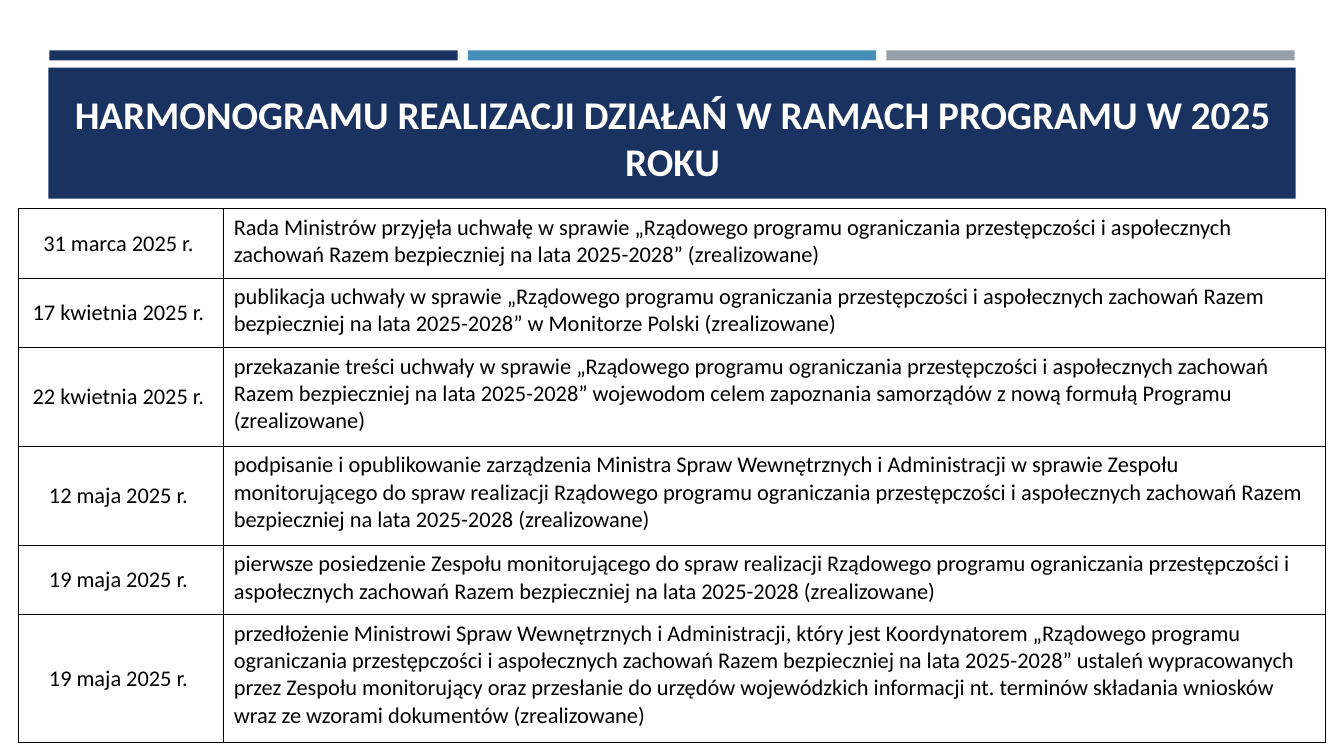
from lxml import etree
from pptx import Presentation
from pptx.dml.color import RGBColor
from pptx.enum.shapes import MSO_SHAPE
from pptx.enum.text import MSO_ANCHOR, MSO_AUTO_SIZE, PP_ALIGN
from pptx.oxml.ns import qn
from pptx.util import Inches, Pt

NAVY = RGBColor(0x1A, 0x32, 0x60)
BLUE = RGBColor(0x45, 0x90, 0xB8)
GREY = RGBColor(0x96, 0x9F, 0xA7)
WHITE = RGBColor(0xFF, 0xFF, 0xFF)
BLACK = RGBColor(0, 0, 0)
FONT = "Calibri"

TITLE = "HARMONOGRAMU REALIZACJI DZIAŁAŃ W RAMACH PROGRAMU W 2025 ROKU"
COLUMNS = (2.04, 10.93)
# date, action, row height
SCHEDULE = [
    ("31 marca 2025 r. ",
     "Rada Ministrów przyjęła uchwałę w sprawie „Rządowego programu ograniczania "
     "przestępczości i aspołecznych zachowań Razem bezpieczniej na lata 2025-2028” "
     "(zrealizowane)", 0.69),
    ("17 kwietnia 2025 r. ",
     "publikacja uchwały w sprawie „Rządowego programu ograniczania przestępczości "
     "i aspołecznych zachowań Razem bezpieczniej na lata 2025-2028” w Monitorze "
     "Polski (zrealizowane)", 0.69),
    ("22 kwietnia 2025 r. ",
     "przekazanie treści uchwały w sprawie „Rządowego programu ograniczania "
     "przestępczości i aspołecznych zachowań Razem bezpieczniej na lata 2025-2028” "
     "wojewodom celem zapoznania samorządów z nową formułą Programu "
     "(zrealizowane)", 0.98),
    ("12 maja 2025 r. ",
     "podpisanie i opublikowanie zarządzenia Ministra Spraw Wewnętrznych i "
     "Administracji w sprawie Zespołu monitorującego do spraw realizacji Rządowego "
     "programu ograniczania przestępczości i aspołecznych zachowań Razem "
     "bezpieczniej na lata 2025-2028 (zrealizowane)", 0.98),
    ("19 maja 2025 r. ",
     "pierwsze posiedzenie Zespołu monitorującego do spraw realizacji Rządowego "
     "programu ograniczania przestępczości i aspołecznych zachowań Razem "
     "bezpieczniej na lata 2025-2028 (zrealizowane)", 0.69),
    ("19 maja 2025 r. ",
     "przedłożenie Ministrowi Spraw Wewnętrznych i Administracji, który jest "
     "Koordynatorem „Rządowego programu ograniczania przestępczości i aspołecznych "
     "zachowań Razem bezpieczniej na lata 2025-2028” ustaleń wypracowanych przez "
     "Zespołu monitorujący oraz przesłanie do urzędów wojewódzkich informacji nt. "
     "terminów składania wniosków wraz ze wzorami dokumentów (zrealizowane)", 1.27),
]


def add_block(slide, x, y, w, h, color):
    sp = slide.shapes.add_shape(MSO_SHAPE.RECTANGLE, Inches(x), Inches(y),
                                Inches(w), Inches(h))
    sp.shadow.inherit = False
    sp.fill.solid()
    sp.fill.fore_color.rgb = color
    sp.line.fill.background()


def write(p, text, size, color, align, bold=False):
    p.alignment = align
    r = p.add_run()
    r.text = text
    r.font.name, r.font.size, r.font.bold = FONT, Pt(size), bold
    r.font.color.rgb = color


def add_stripes(slide, x, y, w, h, gap=0.1):
    stripe = (w - 2 * gap) / 3
    for i, color in enumerate((NAVY, BLUE, GREY)):
        add_block(slide, x + i * (stripe + gap), y, stripe, h, color)


def add_title(slide, x, y, w, h):
    """Fill the banner and bring the title placeholder in front of it."""
    add_block(slide, x, y, w, h, NAVY)
    title = slide.shapes.title
    title.left, title.top = Inches(x + 0.16), Inches(y + 0.1)
    title.width, title.height = Inches(w - 0.31), Inches(h - 0.19)
    title.element.getparent().append(title.element)
    tf = title.text_frame
    tf.word_wrap = True
    tf.auto_size = MSO_AUTO_SIZE.NONE
    tf.vertical_anchor = MSO_ANCHOR.BOTTOM
    write(tf.paragraphs[0], TITLE, 28, WHITE, PP_ALIGN.CENTER, bold=True)


def set_borders(cell):
    tcPr = cell._tc.get_or_add_tcPr()
    for i, side in enumerate(("lnL", "lnR", "lnT", "lnB")):
        ln = etree.Element(qn(f"a:{side}"), w=str(Pt(1)))
        fill = etree.SubElement(ln, qn("a:solidFill"))
        etree.SubElement(fill, qn("a:srgbClr"), val=str(BLACK))
        tcPr.insert(i, ln)


def add_schedule(slide, x, y):
    heights = [row[2] for row in SCHEDULE]
    table = slide.shapes.add_table(
        len(SCHEDULE), len(COLUMNS), Inches(x), Inches(y),
        Inches(sum(COLUMNS)), Inches(sum(heights))).table
    table.first_row = table.horz_banding = False
    for column, width in zip(table.columns, COLUMNS):
        column.width = Inches(width)
    for row, (date, action, height) in zip(table.rows, SCHEDULE):
        row.height = Inches(height)
        date_cell, action_cell = row.cells
        date_cell.vertical_anchor = MSO_ANCHOR.MIDDLE
        write(date_cell.text_frame.paragraphs[0], date, 16, BLACK, PP_ALIGN.CENTER)
        write(action_cell.text_frame.paragraphs[0], action, 16, BLACK, PP_ALIGN.LEFT)
        for cell in row.cells:
            cell.fill.background()
            set_borders(cell)


def main():
    prs = Presentation()
    prs.slide_width, prs.slide_height = Inches(13.33), Inches(7.5)
    slide = prs.slides.add_slide(prs.slide_layouts[5])
    add_stripes(slide, 0.49, 0.5, 12.35, 0.1)
    add_title(slide, 0.48, 0.67, 12.37, 1.3)
    add_schedule(slide, 0.18, 2.07)
    prs.save("out.pptx")


if __name__ == "__main__":
    main()
